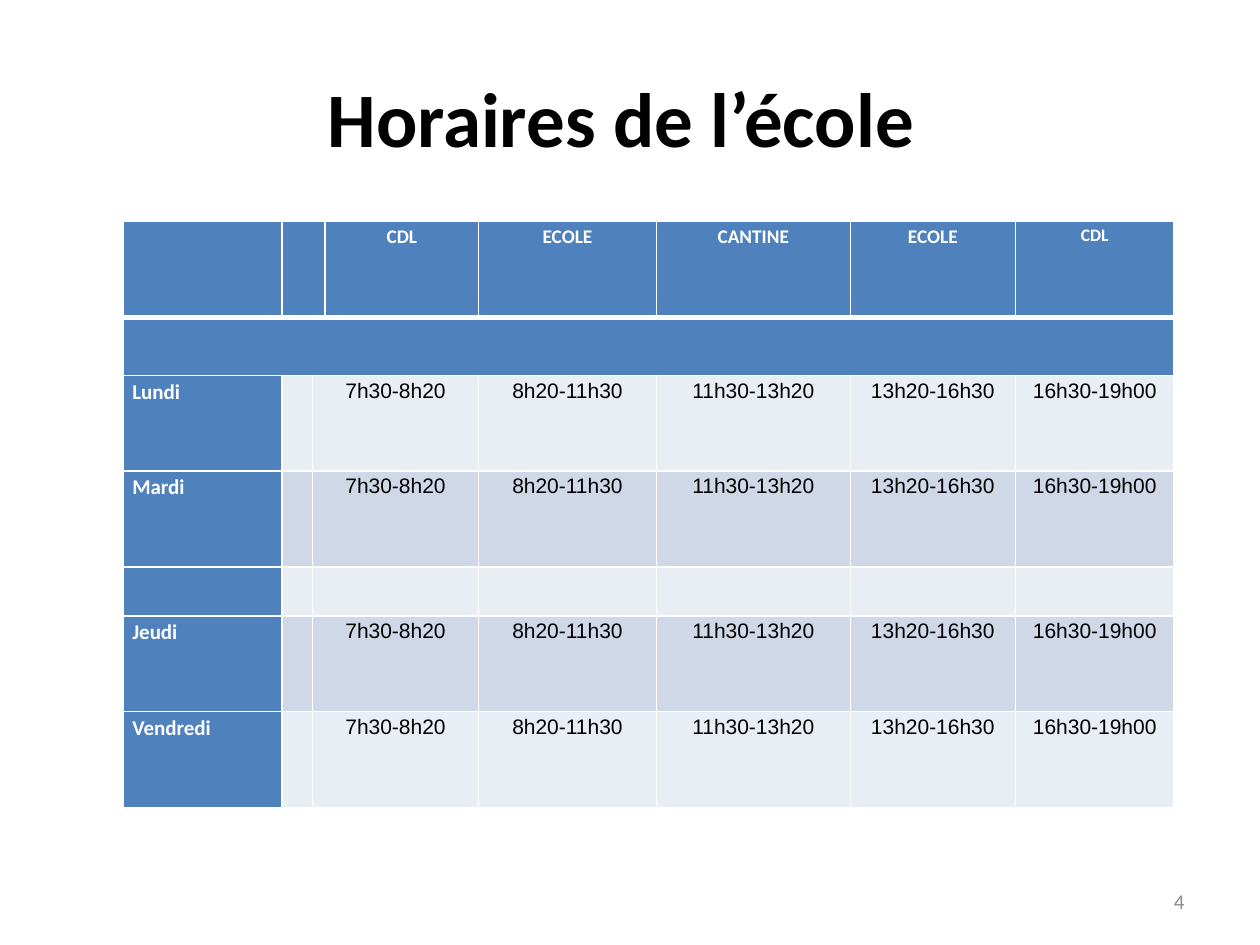
import pptx
import pptx.util
import pptx.dml.color
import pptx.enum.text
import pptx.oxml

Inches, Pt = pptx.util.Inches, pptx.util.Pt
ALIGN = pptx.enum.text.PP_ALIGN
MIDDLE = pptx.enum.text.MSO_ANCHOR.MIDDLE
NS = "http://schemas.openxmlformats.org/drawingml/2006/main"

COLORS = {"blue": "4F81BD", "light": "E9EDF4", "dark": "D0D8E8",
          "white": "FFFFFF", "black": "000000", "gray": "8C8C8C"}

TITLE = "Horaires de l’école "
PAGE = "4"
HEADS = [("CDL", 11), ("ECOLE", 11), ("CANTINE", 11), ("ECOLE", 11), ("CDL", 10)]
HOURS = ["7h30-8h20", "8h20-11h30", "11h30-13h20", "13h20-16h30", "16h30-19h00"]
DAYS = ["Lundi", "Mardi", "", "Jeudi", "Vendredi"]

WIDTHS = [1.26, 0.24, 0.1, 1.22, 1.41, 1.54, 1.31, 1.26]
HEIGHTS = [0.76, 0.46, 0.76, 0.76, 0.39, 0.76, 0.76]
TIMES = [2, 4, 5, 6, 7]  # columns where the hours start


def write(frame, text, size, color, font="Calibri", bold=False, align=ALIGN.LEFT):
    para = frame.paragraphs[0]
    para.alignment = align
    run = para.add_run()
    run.text = text
    run.font.size = Pt(size)
    run.font.name = font
    run.font.bold = bold
    run.font.color.rgb = pptx.dml.color.RGBColor.from_string(COLORS[color])
    return para


def add_text(slide, box, text, size, color, **style):
    frame = slide.shapes.add_textbox(*map(Inches, box)).text_frame
    frame.word_wrap = True
    frame.vertical_anchor = MIDDLE
    write(frame, text, size, color, **style)


def dress(cell, color, top=1, bottom=1):
    """Set the margins, white borders and fill of a cell."""
    cell.margin_left = cell.margin_right = Inches(0.07)
    cell.margin_top = cell.margin_bottom = 0
    props = cell._tc.get_or_add_tcPr()
    for side, width in zip("LRTB", (1, 1, top, bottom)):
        props.append(pptx.oxml.parse_xml(
            f'<a:ln{side} xmlns:a="{NS}" w="{Pt(width)}"><a:solidFill>'
            f'<a:srgbClr val="{COLORS["white"]}"/></a:solidFill></a:ln{side}>'))
    cell.fill.solid()
    cell.fill.fore_color.rgb = pptx.dml.color.RGBColor.from_string(COLORS[color])


def fill_cell(cell, text, size, color, after=None, **style):
    para = write(cell.text_frame, text, size, color, **style)
    para.line_spacing = 1.15
    if after:
        para.space_after = Pt(after)


def add_hours(slide):
    size = (len(HEIGHTS), len(WIDTHS))
    box = (0.98, 1.76, sum(WIDTHS), sum(HEIGHTS))
    table = slide.shapes.add_table(*size, *map(Inches, box)).table
    for col, width in zip(table.columns, WIDTHS):
        col.width = Inches(width)
    for row, height in zip(table.rows, HEIGHTS):
        row.height = Inches(height)

    for r in range(size[0]):
        for c in range(size[1]):
            band = "light" if r % 2 == 0 else "dark"
            dress(table.cell(r, c), "blue" if r < 2 or c == 0 else band,
                  top=3 if r == 1 else 1, bottom=3 if r == 0 else 1)

    table.cell(0, 1).merge(table.cell(0, 2))
    table.cell(1, 0).merge(table.cell(1, size[1] - 1))
    for c, (text, points) in enumerate(HEADS, 3):
        fill_cell(table.cell(0, c), text, points, "white", bold=True, align=ALIGN.CENTER)
    for r, day in enumerate(DAYS, 2):
        table.cell(r, 2).merge(table.cell(r, 3))
        if not day:
            continue
        fill_cell(table.cell(r, 0), day, 12, "white", bold=True)
        for c, text in zip(TIMES, HOURS):
            fill_cell(table.cell(r, c), text, 12, "black", after=10,
                      font="Arial", align=ALIGN.CENTER)


def main():
    deck = pptx.Presentation()
    deck.slide_width, deck.slide_height = Inches(10), Inches(7.5)
    slide = deck.slides.add_slide(deck.slide_layouts[6])
    add_text(slide, (0.5, 0.3, 9, 1.25), TITLE, 44, "black", bold=True, align=ALIGN.CENTER)
    add_hours(slide)
    add_text(slide, (7.17, 6.95, 2.33, 0.4), PAGE, 12, "gray", align=ALIGN.RIGHT)
    deck.save("out.pptx")


if __name__ == "__main__":
    main()
